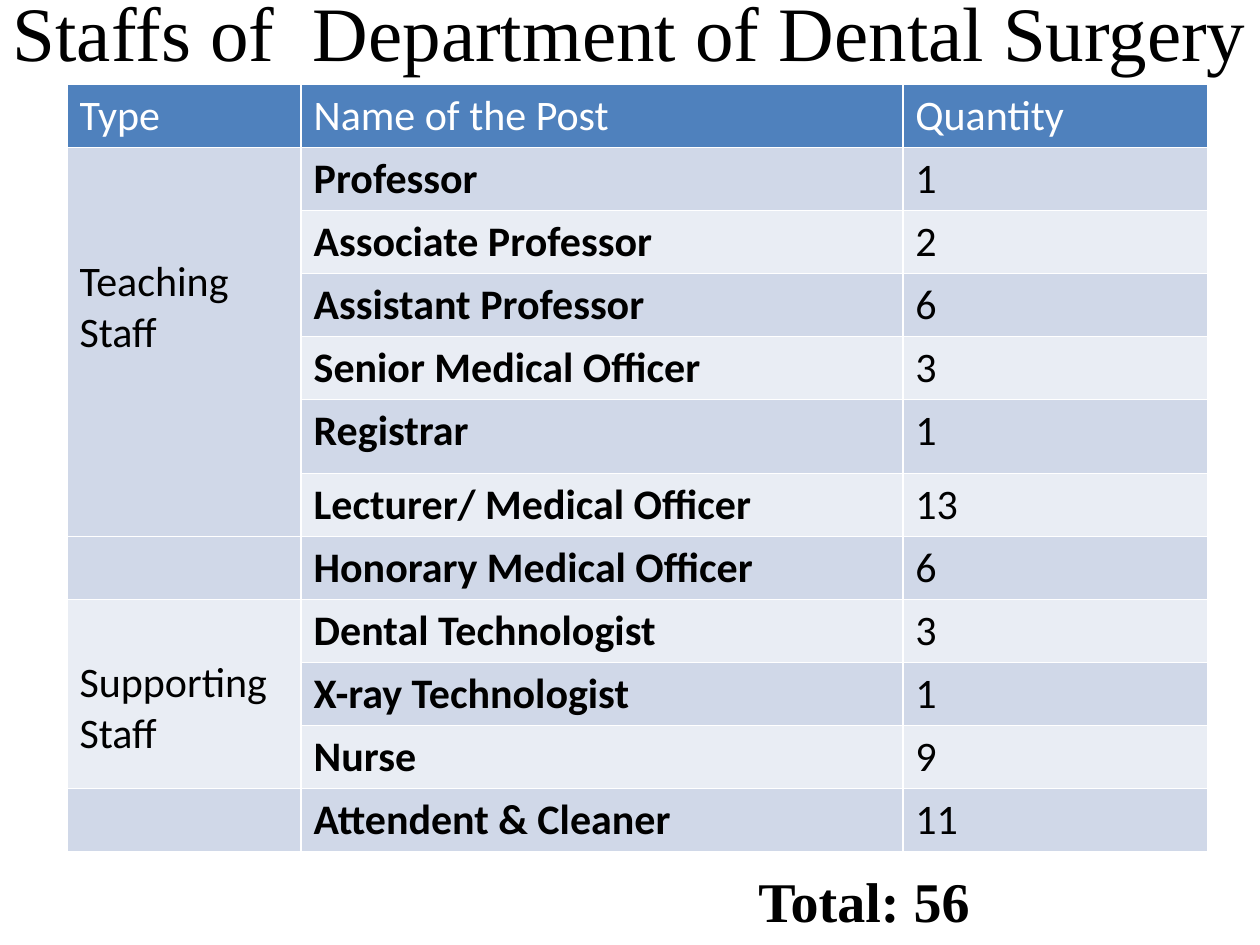
from pptx import Presentation
from pptx.dml.color import RGBColor
from pptx.enum.text import MSO_ANCHOR, PP_ALIGN
from pptx.util import Cm, Pt

COLORS = {"header": "4F81BD", "odd": "D0D8E8", "even": "E9EDF4",
          "light": "FFFFFF", "dark": "000000"}

TITLE = "Staffs of  Department of Dental Surgery"
TOTAL = "Total: 56"
HEADINGS = ("Type", "Name of the Post", "Quantity")
POSTS = [
    ("Professor", 1),
    ("Associate Professor", 2),
    ("Assistant Professor", 6),
    ("Senior Medical Officer", 3),
    ("Registrar", 1),
    ("Lecturer/ Medical Officer", 13),
    ("Honorary Medical Officer", 6),
    ("Dental Technologist", 3),
    ("X-ray Technologist", 1),
    ("Nurse", 9),
    ("Attendent & Cleaner", 11),
]
# staff type, first row, last row, top margin in cm
STAFF_TYPES = [("Teaching Staff", 1, 6, 2.2), ("Supporting Staff", 8, 10, 1.16)]

COLUMN_WIDTHS = (4.72, 12.13, 6.14)
ROW_HEIGHT, REGISTRAR_ROW, REGISTRAR_HEIGHT = 1.19, 5, 1.49

BODY = {"name": "Calibri", "size": Pt(24), "bold": False}
HEADLINE = {"name": "Times New Roman", "size": Pt(44), "bold": False}
SUM = {"name": "Times New Roman", "size": Pt(32), "bold": True}


def rgb(name):
    return RGBColor.from_string(COLORS[name])


def write(frame, text, font_format, color="dark", align=PP_ALIGN.LEFT):
    paragraph = frame.paragraphs[0]
    paragraph.alignment = align
    run = paragraph.add_run()
    run.text = str(text)
    for key, value in font_format.items():
        setattr(run.font, key, value)
    run.font.color.rgb = rgb(color)


def add_text(slide, box, text, font_format, align, anchor):
    frame = slide.shapes.add_textbox(*map(Cm, box)).text_frame
    frame.word_wrap = True
    frame.vertical_anchor = anchor
    write(frame, text, font_format, align=align)


def add_staff_table(slide):
    row_count = len(POSTS) + 1
    heights = [ROW_HEIGHT] * row_count
    heights[REGISTRAR_ROW] = REGISTRAR_HEIGHT
    table = slide.shapes.add_table(
        row_count, len(HEADINGS), Cm(1.35), Cm(1.7),
        Cm(sum(COLUMN_WIDTHS)), Cm(sum(heights))).table
    for column, width in zip(table.columns, COLUMN_WIDTHS):
        column.width = Cm(width)
    for row, height in zip(table.rows, heights):
        row.height = Cm(height)

    for index, row in enumerate(table.rows):
        band = "header" if index == 0 else "odd" if index % 2 else "even"
        for cell in row.cells:
            cell.fill.solid()
            cell.fill.fore_color.rgb = rgb(band)

    for column, heading in enumerate(HEADINGS):
        write(table.cell(0, column).text_frame, heading, BODY, "light")
    for row, (post, quantity) in enumerate(POSTS, start=1):
        write(table.cell(row, 1).text_frame, post, BODY | {"bold": True})
        write(table.cell(row, 2).text_frame, quantity, BODY)
    for staff_type, first, last, top in STAFF_TYPES:
        cell = table.cell(first, 0)
        cell.merge(table.cell(last, 0))
        cell.margin_top = Cm(top)
        write(cell.text_frame, staff_type, BODY)


def main():
    deck = Presentation()
    deck.slide_width, deck.slide_height = Cm(25.4), Cm(19.05)
    slide = deck.slides.add_slide(deck.slide_layouts[6])
    add_text(slide, (0, -1.07, 25.4, 3.38), TITLE, HEADLINE,
             PP_ALIGN.CENTER, MSO_ANCHOR.MIDDLE)
    add_staff_table(slide)
    add_text(slide, (15.04, 17.35, 5.46, 1.63), TOTAL, SUM,
             PP_ALIGN.LEFT, MSO_ANCHOR.TOP)
    deck.save("out.pptx")


if __name__ == "__main__":
    main()
